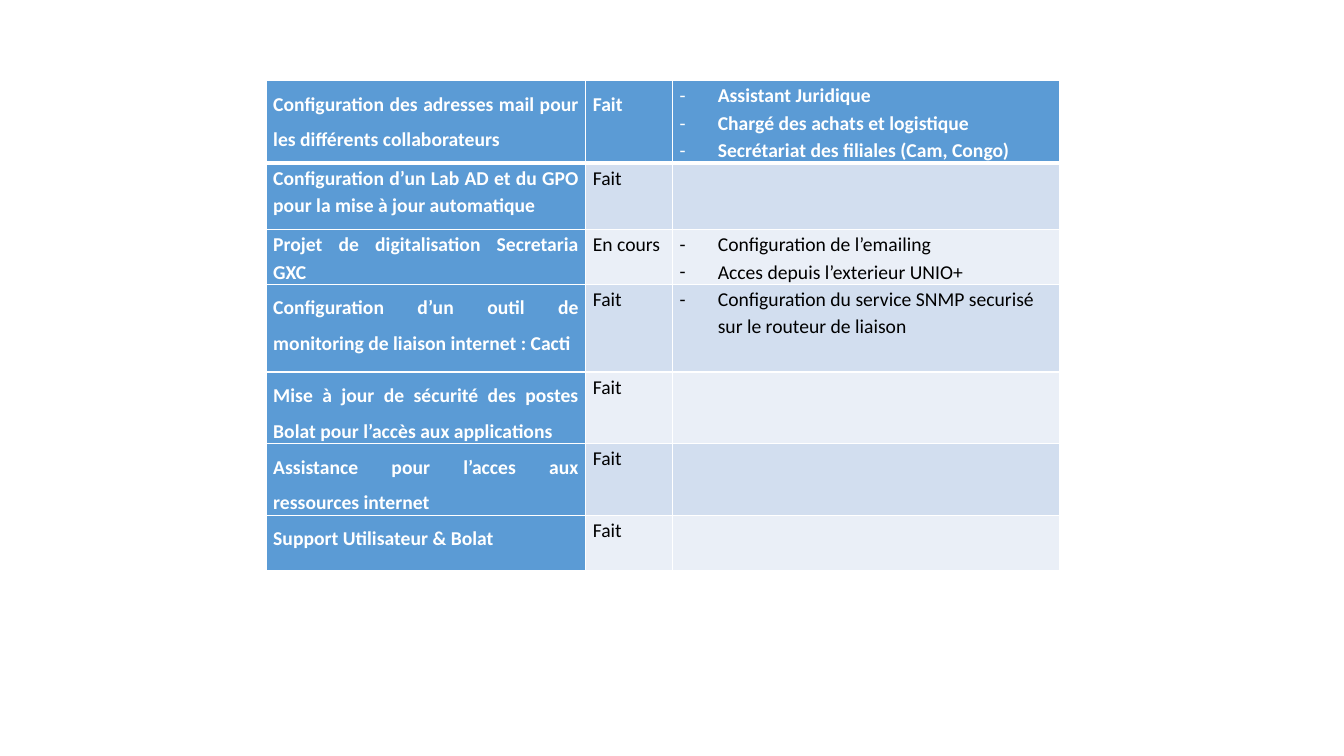
from pptx import Presentation, util as u
from pptx.dml.color import RGBColor
from pptx.enum import text
from pptx.oxml import parse_xml
from pptx.oxml.ns import nsdecls

THEME = {
    "font": "Calibri", "size": 14,
    "blue": "5B9BD5", "bands": ("EAEFF7", "D2DEEF"),
    "white": "FFFFFF", "black": "000000",
    "rule": 1, "thick": 3, "tight": 1.15, "loose": 1.5,
}
COLS = (3.17, 0.86, 3.84)
ROWS = (0.78, 0.66, 0.52, 0.87, 0.68, 0.68, 0.55)
LEFT, TOP, PAD, HANG = 2.64, 0.8, 0.07, 0.38

# Task, status, details, line spacing of the task
TASKS = (
    ("Configuration des adresses mail pour les différents collaborateurs", "Fait",
     ("Assistant Juridique", "Chargé des achats et logistique",
      "Secrétariat des filiales (Cam, Congo)"), "loose"),
    ("Configuration d’un Lab AD et du GPO pour la mise à jour automatique", "Fait", (), "tight"),
    ("Projet de digitalisation Secretaria GXC", "En cours",
     ("Configuration de l’emailing", "Acces depuis l’exterieur UNIO+"), "tight"),
    ("Configuration d’un outil de monitoring de liaison internet : Cacti", "Fait",
     ("Configuration du service SNMP securisé sur le routeur de liaison",), "loose"),
    ("Mise à jour de sécurité des postes Bolat pour l’accès aux applications", "Fait", (), "loose"),
    ("Assistance pour l’acces aux ressources internet", "Fait", (), "loose"),
    ("Support Utilisateur & Bolat", "Fait", (), "loose"),
)


def frame(cell, row):
    """Draw the white rules of a cell; the one under the header is thicker."""
    props = cell._tc.get_or_add_tcPr()
    for side in "LRTB":
        heavy = row == 0 and side == "B"
        width = u.Pt(THEME["thick" if heavy else "rule"])
        props.append(parse_xml(
            f'<a:ln{side} {nsdecls("a")} w="{width}"><a:solidFill>'
            f'<a:srgbClr val="{THEME["white"]}"/></a:solidFill></a:ln{side}>'))


def write(cell, lines, space, strong, just=False, dash=False):
    body = cell.text_frame
    for i, line in enumerate(lines):
        para = body.add_paragraph() if i else body.paragraphs[0]
        para.line_spacing = THEME[space]
        para.alignment = text.PP_ALIGN.JUSTIFY if just else text.PP_ALIGN.LEFT
        if dash:
            props = para._p.get_or_add_pPr()
            props.set("marL", str(u.Inches(HANG)))
            props.set("indent", str(-u.Inches(HANG)))
            props.append(parse_xml(f'<a:buFont {nsdecls("a")} typeface="{THEME["font"]}"/>'))
            props.append(parse_xml(f'<a:buChar {nsdecls("a")} char="-"/>'))
        run = para.add_run()
        run.text = line
        run.font.name = THEME["font"]
        run.font.size = u.Pt(THEME["size"])
        run.font.bold = strong
        run.font.color.rgb = RGBColor.from_string(THEME["white" if strong else "black"])


deck = Presentation()
deck.slide_width, deck.slide_height = u.Inches(13.33), u.Inches(7.5)
slide = deck.slides.add_slide(deck.slide_layouts[6])
grid = slide.shapes.add_table(
    len(ROWS), len(COLS), u.Inches(LEFT), u.Inches(TOP),
    u.Inches(sum(COLS)), u.Inches(sum(ROWS))).table
grid.first_row = grid.horz_banding = False
for col, width in zip(grid.columns, COLS):
    col.width = u.Inches(width)
for row, height in zip(grid.rows, ROWS):
    row.height = u.Inches(height)

for r, (task, state, notes, space) in enumerate(TASKS):
    for c in range(len(COLS)):
        cell = grid.cell(r, c)
        strong = r == 0 or c == 0
        frame(cell, r)
        cell.fill.solid()
        cell.fill.fore_color.rgb = RGBColor.from_string(
            THEME["blue"] if strong else THEME["bands"][r % 2])
        cell.margin_left = cell.margin_right = u.Inches(PAD)
        cell.margin_top = cell.margin_bottom = 0
        if c == 0:
            write(cell, [task], space, strong, just=True)
        elif c == 1:
            write(cell, [state], "tight" if r else "loose", strong)
        else:
            write(cell, notes, "tight", strong, dash=True)

deck.save("out.pptx")
